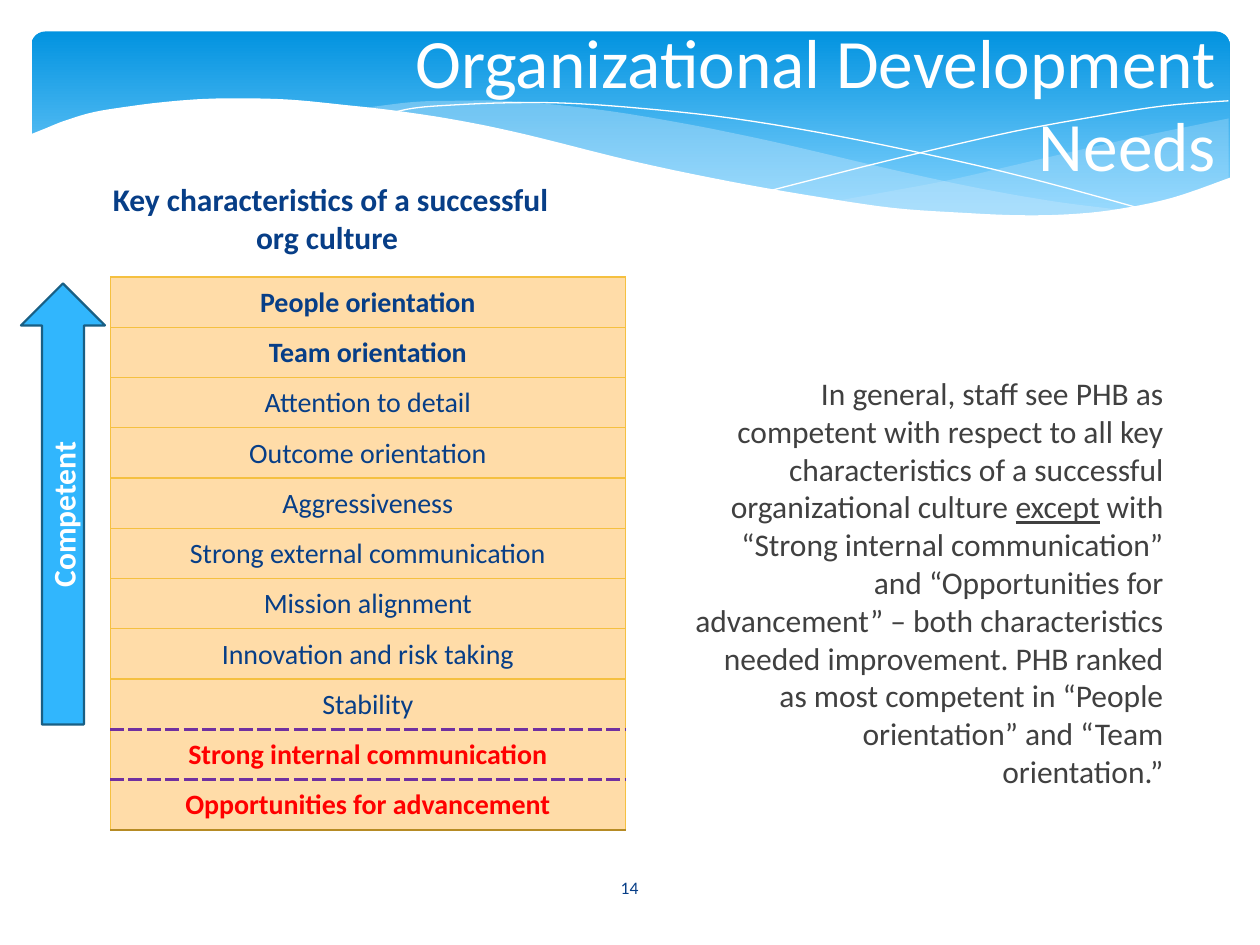
from lxml.etree import SubElement
from pptx import Presentation
from pptx.dml.color import RGBColor
from pptx.enum.shapes import MSO_SHAPE as Shape
from pptx.enum.text import MSO_ANCHOR as Anchor, PP_ALIGN as Align
from pptx.oxml.ns import qn
from pptx.util import Pt

NAVY, WHITE, GRAY, RED = "073E87", "FFFFFF", "404040", "FF0000"
PALE_BLUE, SKY, DARK_BLUE = "C6E7FC", "31B6FD", "195F84"
CELL_FILL = "FFDCA8"
GOLD_BORDER = ("F5C040", 0.75, "solid")
BROWN_BORDER = ("B68B24", 1.25, "solid")
DASHED_BORDER = ("7030A0", 2.25, "sysDash")

CHARACTERISTICS = [
    "People orientation", "Team orientation", "Attention to detail",
    "Outcome orientation", "Aggressiveness", "Strong external communication",
    "Mission alignment", "Innovation and risk taking", "Stability",
    "Strong internal communication", "Opportunities for advancement",
]
STRONGEST = CHARACTERISTICS[:2]
WEAKEST = CHARACTERISTICS[-2:]

RIGHT_WAVE_TOP = [(702, 67.7), (652, 77.9), (620, 85), (580, 94.3), (542, 103),
                  (508, 109.4), (476, 115.2)]
RIGHT_WAVE_BOTTOM = [(476, 115.2), (517, 120.2), (554, 123), (586, 123.8), (615, 123),
                     (641, 121), (663, 117.4), (683, 109.4), (702, 102)]
MIDDLE_WAVE_TOP = [(643, 120.2), (603, 115.2), (558, 107.3), (508, 96.5), (453, 83.5),
                   (420, 76.3), (390, 70.4), (352, 64), (317, 59.8), (287, 57.6),
                   (260, 57.6), (236, 58.3), (206, 62)]
MIDDLE_WAVE_BOTTOM = [(206, 62), (246, 67.5), (291, 76.3), (323, 83.5), (382, 97.2),
                      (433, 108), (479, 116), (520, 121), (557, 123.8), (589, 124.6),
                      (624, 123), (643, 120.2)]
FALLING_LINE = [(222.5, 64.8), (236, 61.9), (254, 60.3), (289, 58.8), (324, 59), (367, 62),
                (419, 67.7), (479, 77.8), (547, 92), (598, 104.4), (653, 119.5)]
RISING_LINE = [(441, 108.7), (469, 101.5), (500, 93.6), (539, 84.2), (580, 75),
               (623.5, 67), (665, 60.5), (702, 57.6)]
WHITE_WAVE = [(703, 101.5), (670, 113), (639, 119.5), (612, 122.4), (582, 123), (548, 121.5),
              (510, 118.8), (466, 112.3), (417, 103.7), (362, 92.2), (301, 77), (263, 69),
              (227, 63.4), (195, 59.8), (166, 57), (139, 56.2), (116, 56.6), (95, 58.2),
              (76, 60.5), (54, 64), (37, 69), (26, 73.4), (17, 77)]
WHITE_WAVE_BASE = [(17, 161), (703, 161)]


def color(value):
    return RGBColor.from_string(value)


def smooth(points, steps=5):
    padded = [points[0], *points, points[-1]]
    curve = [points[0]]
    for before, start, end, after in zip(padded, padded[1:], padded[2:], padded[3:]):
        for step in range(1, steps + 1):
            t = step / steps
            curve.append(tuple(
                (2 * b + (c - a) * t + (2 * a - 5 * b + 4 * c - d) * t ** 2
                 + (3 * b - a - 3 * c + d) * t ** 3) / 2
                for a, b, c, d in zip(before, start, end, after)))
    return curve


def add_outline(slide, points, fill=None, alpha=100, line=None):
    vertices = [(Pt(x), Pt(y)) for x, y in points]
    builder = slide.shapes.build_freeform(*vertices[0])
    builder.add_line_segments(vertices[1:], close=fill is not None)
    shape = builder.convert_to_shape()
    shape.shadow.inherit = False
    if fill:
        shape.fill.solid()
        shape.fill.fore_color.rgb = color(fill)
        if alpha < 100:
            fill_color = next(shape.element.spPr.iter(qn("a:srgbClr")))
            SubElement(fill_color, qn("a:alpha"), val=str(alpha * 1000))
    else:
        shape.fill.background()
    if line:
        shape.line.color.rgb = color(line)
        shape.line.width = Pt(0)
    else:
        shape.line.fill.background()


def add_banner(slide):
    banner = slide.shapes.add_shape(
        Shape.ROUNDED_RECTANGLE, Pt(18), Pt(18), Pt(684.7), Pt(112.3))
    banner.adjustments[0] = 0.07
    banner.shadow.inherit = False
    banner.line.fill.background()
    banner.fill.gradient()
    banner.fill.gradient_angle = 270
    stops = [(0, "0293E0"), (0.9, "83D3FE")]
    for stop, (position, value) in zip(banner.fill.gradient_stops, stops):
        stop.position = position
        stop.color.rgb = color(value)
    add_outline(slide, smooth(RIGHT_WAVE_TOP) + smooth(RIGHT_WAVE_BOTTOM), PALE_BLUE, 29)
    add_outline(slide, smooth(MIDDLE_WAVE_TOP) + smooth(MIDDLE_WAVE_BOTTOM), PALE_BLUE, 40)
    for line_points in (FALLING_LINE, RISING_LINE):
        add_outline(slide, smooth(line_points), line=WHITE)
    add_outline(slide, smooth(WHITE_WAVE) + WHITE_WAVE_BASE, WHITE)


def write(text_frame, runs, size, value, align=Align.CENTER, bold=False):
    paragraph = text_frame.paragraphs[0]
    paragraph.alignment = align
    font = paragraph.font
    font.name, font.size, font.bold = "Calibri", Pt(size), bold
    font.color.rgb = color(value)
    for text in runs:
        paragraph.add_run().text = text
    return paragraph


def add_text(slide, box, runs, size, value, anchor=Anchor.TOP, **style):
    text_frame = slide.shapes.add_textbox(*map(Pt, box)).text_frame
    text_frame.word_wrap = True
    text_frame.vertical_anchor = anchor
    return write(text_frame, runs, size, value, **style)


def set_borders(cell, top, bottom):
    properties = cell._tc.get_or_add_tcPr()
    sides = {"L": GOLD_BORDER, "R": GOLD_BORDER, "T": top, "B": bottom}
    for side, (value, width, dash) in sides.items():
        line = SubElement(properties, qn(f"a:ln{side}"), w=str(Pt(width)))
        SubElement(SubElement(line, qn("a:solidFill")), qn("a:srgbClr"), val=value)
        SubElement(line, qn("a:prstDash"), val=dash)


def add_characteristics_table(slide):
    count = len(CHARACTERISTICS)
    table = slide.shapes.add_table(
        count, 1, Pt(63.2), Pt(158.3), Pt(294), Pt(316)).table
    table.first_row = table.horz_banding = False
    edges = [GOLD_BORDER] * (count - 2) + [DASHED_BORDER] * 2 + [BROWN_BORDER]
    for index, name in enumerate(CHARACTERISTICS):
        table.rows[index].height = Pt(28.73)
        cell = table.cell(index, 0)
        set_borders(cell, edges[index], edges[index + 1])
        cell.fill.solid()
        cell.fill.fore_color.rgb = color(CELL_FILL)
        cell.margin_left = cell.margin_right = cell.margin_top = Pt(0.72)
        cell.margin_bottom = Pt(0)
        cell.vertical_anchor = Anchor.MIDDLE
        write(cell.text_frame, [name], 16, RED if name in WEAKEST else NAVY,
              bold=name in STRONGEST + WEAKEST)


def add_competence_arrow(slide):
    arrow = slide.shapes.add_shape(Shape.UP_ARROW, Pt(12), Pt(162), Pt(48), Pt(252))
    arrow.shadow.inherit = False
    arrow.fill.solid()
    arrow.fill.fore_color.rgb = color(SKY)
    arrow.line.color.rgb = color(DARK_BLUE)
    arrow.line.width = Pt(1.25)
    arrow.text_frame.vertical_anchor = Anchor.MIDDLE
    arrow.element.txBody.bodyPr.set("vert", "vert270")
    write(arrow.text_frame, ["Competent"], 18, WHITE, bold=True)


def main():
    presentation = Presentation()
    presentation.slide_width, presentation.slide_height = Pt(720), Pt(540)
    slide = presentation.slides.add_slide(presentation.slide_layouts[6])
    add_banner(slide)
    add_text(slide, (314, 492.5, 91.5, 28.8), ["14"], 10, NAVY, Anchor.MIDDLE)
    add_text(slide, (210, 9.4, 492, 98.6), ["Organizational Development Needs"],
             39.6, WHITE, Anchor.MIDDLE, align=Align.RIGHT)
    add_characteristics_table(slide)
    summary = add_text(slide, (390, 210.2, 282, 247), [
        "In general, staff see PHB as competent with respect to all key characteristics "
        "of a successful organizational culture ",
        "except",
        " with “Strong internal communication” and “Opportunities for advancement” – both "
        "characteristics needed improvement. PHB ranked as most competent in “People "
        "orientation” and “Team orientation.”",
    ], 18, GRAY, align=Align.RIGHT)
    summary.runs[1].font.underline = True
    add_text(slide, (48, 99.4, 282, 51), ["Key characteristics of a successful org culture "],
             18, NAVY, bold=True)
    add_competence_arrow(slide)
    presentation.save("out.pptx")


if __name__ == "__main__":
    main()
